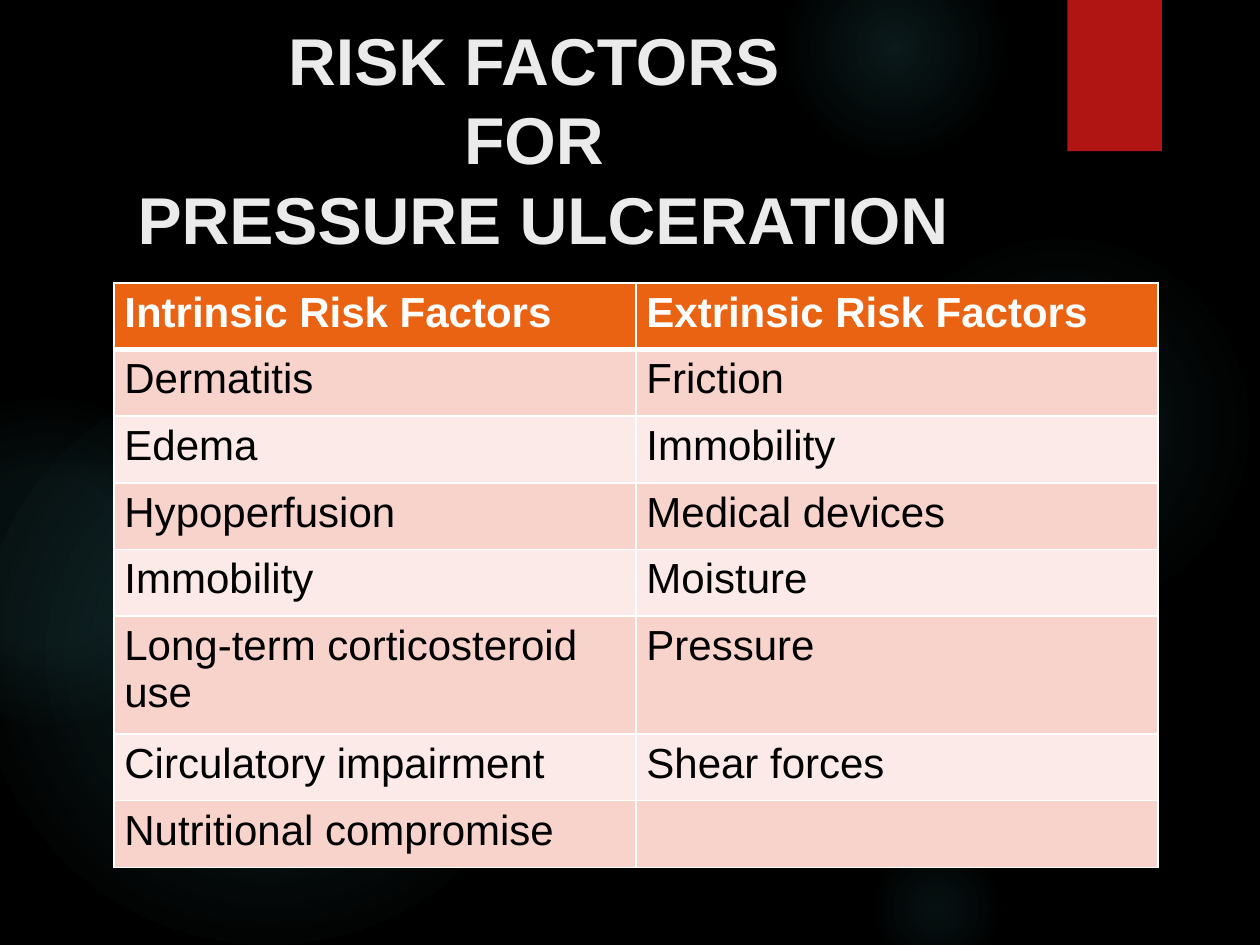
from lxml import etree
from pptx import Presentation
from pptx.dml.color import RGBColor
from pptx.enum.shapes import MSO_SHAPE
from pptx.enum.text import MSO_ANCHOR, MSO_AUTO_SIZE, PP_ALIGN
from pptx.oxml import parse_xml
from pptx.util import Pt

OVAL, RECTANGLE = MSO_SHAPE.OVAL, MSO_SHAPE.RECTANGLE
TOP, NO_AUTOFIT = MSO_ANCHOR.TOP, MSO_AUTO_SIZE.NONE
LEFT, CENTER = PP_ALIGN.LEFT, PP_ALIGN.CENTER
COLORS = {
    "background": "000000", "glow": "50B9C1", "ribbon": "B01513",
    "title": "EBEBEB", "header": "EA6312", "band_dark": "F7D3CC",
    "band_light": "FBEAE7", "white": "FFFFFF", "black": "000000",
}
NS = 'xmlns:a="http://schemas.openxmlformats.org/drawingml/2006/main"'


def write(frame, text, size=24, color="black", bold=False, align=LEFT, line=None):
    paragraph = frame.paragraphs[0]
    paragraph.text = text
    paragraph.alignment = align
    paragraph.line_spacing = line
    for run in paragraph.runs:
        run.font.name = "Arial"
        run.font.size = Pt(size)
        run.font.bold = bold
        run.font.color.rgb = RGBColor.from_string(COLORS[color])


def add_border(cell, side, width):
    cell._tc.get_or_add_tcPr().append(parse_xml(
        f'<a:{side} {NS} w="{Pt(width)}"><a:solidFill>'
        f'<a:srgbClr val="{COLORS["white"]}"/></a:solidFill></a:{side}>'))


prs = Presentation()
prs.slide_width, prs.slide_height = Pt(720), Pt(540)
slide = prs.slides.add_slide(prs.slide_layouts[5])
slide.background.fill.solid()
slide.background.fill.fore_color.rgb = RGBColor.from_string(COLORS["background"])

# Background glows: left, top, diameter, then (position, opacity) stops in percent
glows = [
    (496, 132, 222, [(0, 7), (36, 6), (69, 0)]),
    (448, -36, 126, [(0, 14), (36, 7), (73, 0)]),
    (496, 480, 78, [(0, 9), (36, 5), (66, 0)]),
    (-12, 210, 330, [(0, 11), (36, 10), (75, 0)]),
    (-66, 228, 186, [(0, 8), (36, 8), (72, 0)]),
]
for left, top, diameter, stops in glows:
    glow = slide.shapes.add_shape(OVAL, Pt(left), Pt(top), Pt(diameter), Pt(diameter))
    glow.shadow.inherit = False
    glow.line.fill.background()
    stop_xml = "".join(
        f'<a:gs pos="{position * 1000}"><a:srgbClr val="{COLORS["glow"]}">'
        f'<a:alpha val="{opacity * 1000}"/></a:srgbClr></a:gs>'
        for position, opacity in stops)
    gradient = etree.fromstring(
        f'<a:gradFill {NS}><a:gsLst>{stop_xml}</a:gsLst><a:path path="circle">'
        '<a:fillToRect l="50000" t="50000" r="50000" b="50000"/></a:path></a:gradFill>')
    glow._element.spPr.prstGeom.addnext(gradient)

# Red ribbon
ribbon = slide.shapes.add_shape(RECTANGLE, Pt(610), Pt(0), Pt(54), Pt(86.4))
ribbon.shadow.inherit = False
ribbon.fill.solid()
ribbon.fill.fore_color.rgb = RGBColor.from_string(COLORS["ribbon"])
ribbon.line.fill.background()

# Title, in front of the glows
title = slide.shapes.title
title.left, title.top, title.width, title.height = Pt(26.6), Pt(7.2), Pt(567.4), Pt(50.4)
title.text_frame.auto_size = NO_AUTOFIT
title.text_frame.vertical_anchor = TOP
write(title.text_frame, "RISK FACTORS \vFOR \vPRESSURE ULCERATION",
      size=37.8, color="title", bold=True, align=CENTER, line=Pt(45.4))
slide.shapes._spTree.append(title._element)

# Risk factor table
risk_factors = [
    ("Intrinsic Risk Factors", "Extrinsic Risk Factors"),
    ("Dermatitis", "Friction"),
    ("Edema", "Immobility"),
    ("Hypoperfusion", "Medical devices"),
    ("Immobility", "Moisture"),
    ("Long-term corticosteroid use", "Pressure"),
    ("Circulatory impairment", "Shear forces"),
    ("Nutritional compromise", ""),
]
row_heights = [38.1] * 5 + [67.4] + [38.1] * 2
table = slide.shapes.add_table(len(risk_factors), 2, Pt(65.1), Pt(161.6),
                               Pt(596.6), Pt(sum(row_heights))).table
for column in table.columns:
    column.width = Pt(298.3)
for row, (factors, height) in enumerate(zip(risk_factors, row_heights)):
    table.rows[row].height = Pt(height)
    is_header = row == 0
    band = "header" if is_header else "band_dark" if row % 2 else "band_light"
    for col, factor in enumerate(factors):
        cell = table.cell(row, col)
        cell.margin_left = cell.margin_right = Pt(6)
        cell.margin_top = cell.margin_bottom = Pt(3.6)
        for side in ("lnL", "lnR", "lnT", "lnB"):
            header_edge = (row, side) in ((0, "lnB"), (1, "lnT"))
            add_border(cell, side, 3 if header_edge else 1)
        cell.fill.solid()
        cell.fill.fore_color.rgb = RGBColor.from_string(COLORS[band])
        write(cell.text_frame, factor, bold=is_header,
              color="white" if is_header else "black")

prs.save("out.pptx")
